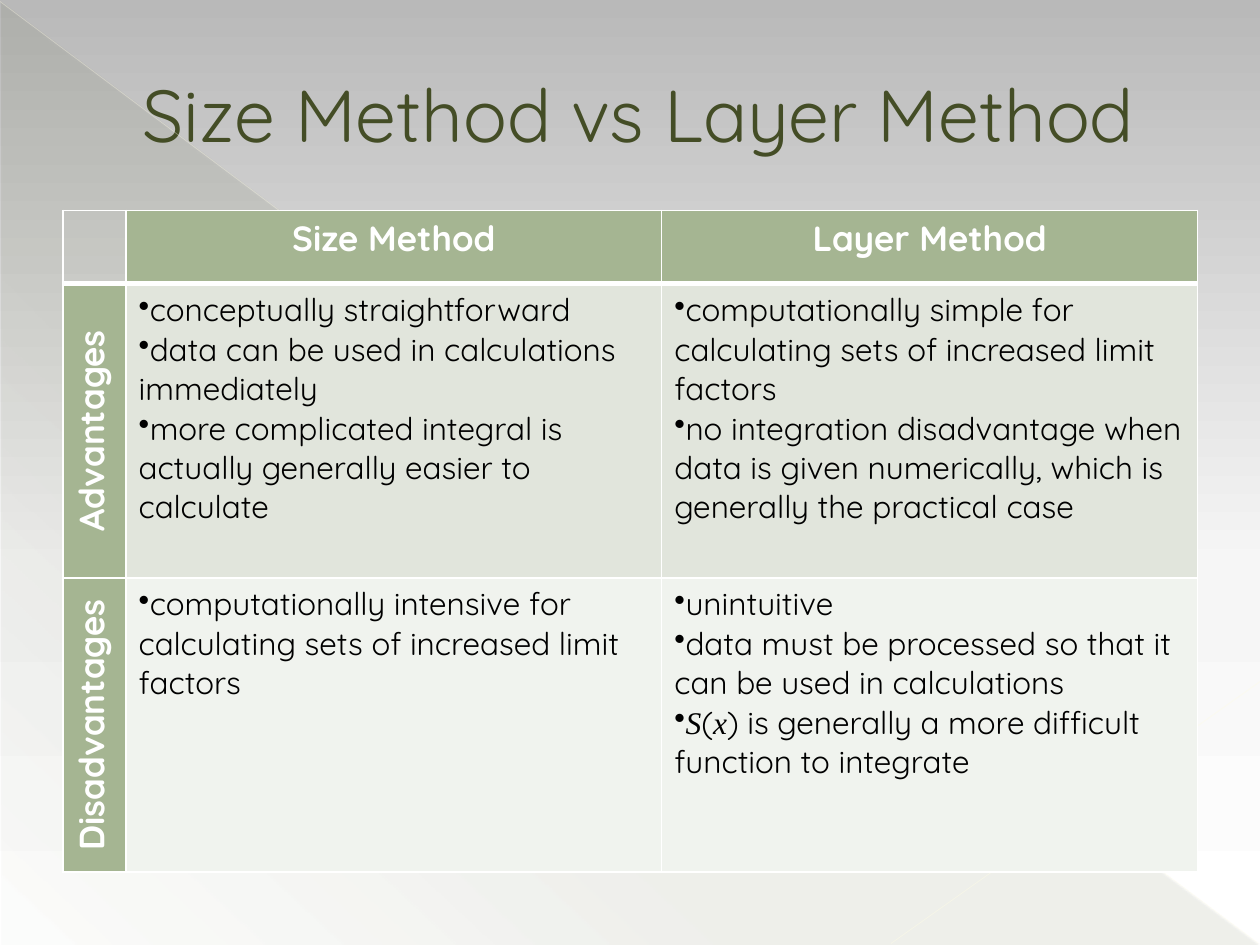
from dataclasses import dataclass

from lxml.etree import SubElement
from pptx import Presentation
from pptx.dml.color import RGBColor
from pptx.enum.shapes import MSO_CONNECTOR as Connector, MSO_SHAPE as Shape
from pptx.enum.text import MSO_ANCHOR as Anchor, MSO_AUTO_SIZE as AutoSize, PP_ALIGN as Align
from pptx.oxml.ns import qn
from pptx.util import Cm, Pt

COLORS = {
    "olive": "444D26", "sage": "A5B592", "white": "FFFFFF", "black": "000000",
    "advantage": "E1E5DC", "disadvantage": "F0F3EE",
    "sky_top": "B9B9B9", "sky_middle": "F6F6F6",
    "descending": "FFFDE3", "ascending": "FFFDE6",
}
FONT = "Quicksand"
MATH_FONT = "Times New Roman"
HEADING = {"name": FONT, "size": Pt(20), "bold": True}
BODY = {"name": FONT, "size": Pt(18), "bold": False}
VARIABLE = BODY | {"name": MATH_FONT, "italic": True}
TITLE = {"name": FONT, "size": Pt(42), "bold": False}
COLUMN_WIDTHS = (1.27, 10.8, 10.8)
ROW_HEIGHTS = (1.48, 5.93, 5.93)


@dataclass(frozen=True)
class Stop:
    percent: int
    color: str
    opacity: int = 100


@dataclass(frozen=True)
class Ray:
    start: tuple[float, float]
    end: tuple[float, float]
    color: str
    width: float
    opacity: int


@dataclass(frozen=True)
class Comparison:
    """One table row; *asterisks* mark mathematical variables."""
    label: str
    fill: str
    size_points: tuple[str, ...]
    layer_points: tuple[str, ...]


SKY = (Stop(0, "sky_top"), Stop(60, "sky_middle"), Stop(100, "white"))
SHADE = (Stop(0, "olive", 10), Stop(70, "olive", 8), Stop(100, "olive", 1))
RAYS = (
    Ray((0, 0.03), (25.37, 19.02), "descending", 0.39, 35),
    Ray((25.4, 13.74), (17.96, 19.02), "ascending", 0.47, 45),
)
METHODS = ("Size Method", "Layer Method")
COMPARISONS = (
    Comparison(
        "Advantages", "advantage",
        ("conceptually straightforward",
         "data can be used in calculations immediately",
         "more complicated integral is actually generally easier to calculate"),
        ("computationally simple for calculating sets of increased limit factors",
         "no integration disadvantage when data is given numerically, "
         "which is generally the practical case")),
    Comparison(
        "Disadvantages", "disadvantage",
        ("computationally intensive for calculating sets of increased limit factors",),
        ("unintuitive",
         "data must be processed so that it can be used in calculations",
         "*S*(*x*) is generally a more difficult function to integrate")),
)


def rgb(color: str) -> RGBColor:
    return RGBColor.from_string(COLORS[color])


def add_color(parent, color: str, opacity: int = 100) -> None:
    node = SubElement(parent, qn("a:srgbClr"), val=COLORS[color])
    if opacity < 100:
        SubElement(node, qn("a:alpha"), val=str(opacity * 1000))


def set_gradient(fill, owner, stops: tuple[Stop, ...], angle: int) -> None:
    """Replace the preset gradient of the fill found inside owner."""
    fill.gradient()
    gradient = owner.find(".//" + qn("a:gradFill"))
    for child in list(gradient):
        gradient.remove(child)
    stop_list = SubElement(gradient, qn("a:gsLst"))
    for stop in stops:
        node = SubElement(stop_list, qn("a:gs"), pos=str(stop.percent * 1000))
        add_color(node, stop.color, stop.opacity)
    SubElement(gradient, qn("a:lin"), ang=str(angle * 60000), scaled="0")


def add_shade(slide) -> None:
    shade = slide.shapes.add_shape(
        Shape.RIGHT_TRIANGLE, Cm(0.03), Cm(0.05), Cm(25.35), Cm(19))
    shade.shadow.inherit = False
    shade.line.fill.background()
    set_gradient(shade.fill, shade._element, SHADE, 133)


def add_ray(slide, ray: Ray) -> None:
    line = slide.shapes.add_connector(
        Connector.STRAIGHT, *(Cm(value) for value in ray.start + ray.end))
    line.line.width = Pt(ray.width)
    line.line.color.rgb = rgb(ray.color)
    properties = line._element.spPr
    SubElement(properties.find(".//" + qn("a:srgbClr")), qn("a:alpha"),
               val=str(ray.opacity * 1000))
    SubElement(properties, qn("a:effectLst"))


def add_run(paragraph, text: str, color: str, formats: dict) -> None:
    run = paragraph.add_run()
    run.text = text
    run.font.color.rgb = rgb(color)
    for attribute, value in formats.items():
        setattr(run.font, attribute, value)


def set_borders(cell, top: float, bottom: float) -> None:
    properties = cell._tc.get_or_add_tcPr()
    widths = {"a:lnL": 1, "a:lnR": 1, "a:lnT": top, "a:lnB": bottom}
    for position, (tag, width) in enumerate(widths.items()):
        border = SubElement(properties, qn(tag), w=str(Pt(width)))
        add_color(SubElement(border, qn("a:solidFill")), "white")
        properties.insert(position, border)


def fill_heading(cell, text: str, vertical: bool = False) -> None:
    cell.fill.solid()
    cell.fill.fore_color.rgb = rgb("sage")
    paragraph = cell.text_frame.paragraphs[0]
    paragraph.alignment = Align.CENTER
    add_run(paragraph, text, "white", HEADING)
    if vertical:
        cell._tc.get_or_add_tcPr().set("vert", "vert270")


def fill_points(cell, points: tuple[str, ...], fill: str) -> None:
    cell.fill.solid()
    cell.fill.fore_color.rgb = rgb(fill)
    frame = cell.text_frame
    for index, point in enumerate(points):
        paragraph = frame.add_paragraph() if index else frame.paragraphs[0]
        SubElement(paragraph._p.get_or_add_pPr(), qn("a:buChar"), char="•")
        for part, text in enumerate(point.split("*")):
            if text:
                add_run(paragraph, text, "black", VARIABLE if part % 2 else BODY)


def add_comparison_table(slide) -> None:
    table = slide.shapes.add_table(
        len(ROW_HEIGHTS), len(COLUMN_WIDTHS), Cm(1.27), Cm(4.24),
        Cm(sum(COLUMN_WIDTHS)), Cm(sum(ROW_HEIGHTS))).table
    for column, width in zip(table.columns, COLUMN_WIDTHS):
        column.width = Cm(width)
    for row, height in zip(table.rows, ROW_HEIGHTS):
        row.height = Cm(height)
    table.cell(0, 0).fill.background()
    for column, method in enumerate(METHODS, start=1):
        fill_heading(table.cell(0, column), method)
    for row, comparison in enumerate(COMPARISONS, start=1):
        fill_heading(table.cell(row, 0), comparison.label, vertical=True)
        fill_points(table.cell(row, 1), comparison.size_points, comparison.fill)
        fill_points(table.cell(row, 2), comparison.layer_points, comparison.fill)
    for row_index, row in enumerate(table.rows):
        for cell in row.cells:
            set_borders(cell, top=3 if row_index == 1 else 1,
                        bottom=3 if row_index == 0 else 1)


def format_title(slide) -> None:
    title = slide.shapes.title
    box = {"left": Cm(1.27), "top": Cm(0.74), "width": Cm(22.86), "height": Cm(3.07)}
    for attribute, value in box.items():
        setattr(title, attribute, value)
    frame = title.text_frame
    frame.auto_size = AutoSize.NONE
    frame.vertical_anchor = Anchor.MIDDLE
    paragraph = frame.paragraphs[0]
    paragraph.alignment = Align.LEFT
    paragraph._p.get_or_add_pPr().set("marL", str(Cm(1.35)))
    add_run(paragraph, "Size Method vs Layer Method", "olive", TITLE)


def main() -> None:
    deck = Presentation()
    deck.slide_width, deck.slide_height = Cm(25.4), Cm(19.05)
    slide = deck.slides.add_slide(deck.slide_layouts[5])
    set_gradient(slide.background.fill, slide._element, SKY, 90)
    add_shade(slide)
    for ray in RAYS:
        add_ray(slide, ray)
    add_comparison_table(slide)
    format_title(slide)
    deck.save("out.pptx")


if __name__ == "__main__":
    main()
